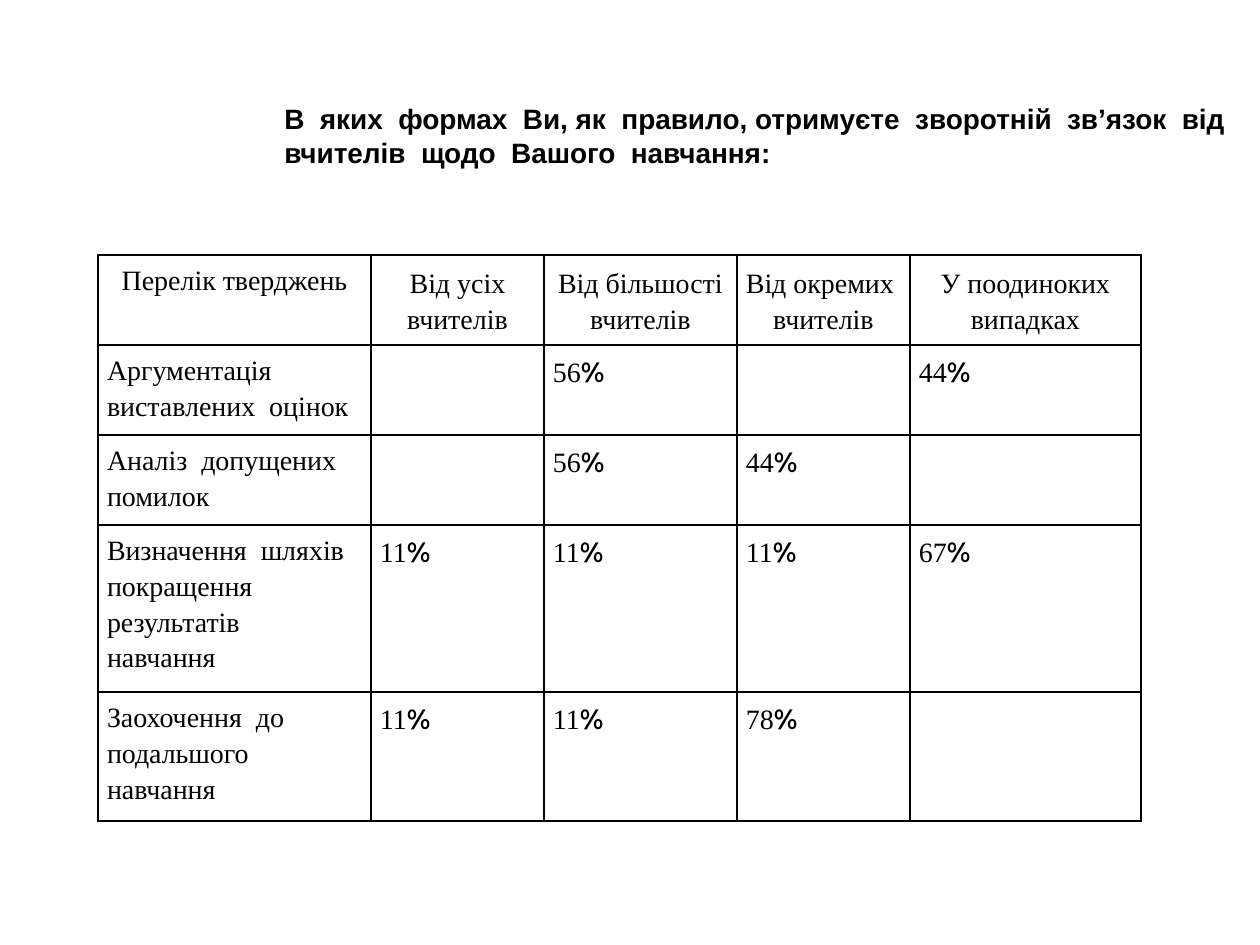
from lxml.etree import SubElement as Sub
from pptx import Presentation
from pptx.dml.color import RGBColor
from pptx.enum.text import MSO_ANCHOR as Anchor, PP_ALIGN as Align
from pptx.oxml.ns import qn
from pptx.util import Pt

PX = 914400 // 126  # slide scale: 126 px to the inch
INK = "000000"
SERIF = "Times New Roman"
TITLE = ("В  яких  формах  Ви, як  правило, отримуєте  зворотній  зв’язок  від  "
         "вчителів  щодо  Вашого  навчання:")
COLS = [273, 173, 193, 173, 231]
ROWS = [90, 90, 90, 167, 129]
HEAD = ["Перелік тверджень", "Від усіх вчителів", "Від більшості вчителів",
        "Від окремих  вчителів", "У поодиноких випадках"]
BODY = [
    ("Аргументація виставлених  оцінок", None, 56, None, 44),
    ("Аналіз  допущених  помилок", None, 56, 44, None),
    ("Визначення  шляхів  покращення  результатів  навчання", 11, 11, 11, 67),
    ("Заохочення  до  подальшого  навчання", 11, 11, 78, None),
]


def px(n):
    return n * PX


def paint(font, code):
    font.color.rgb = RGBColor.from_string(code)


def add_run(para, text, face=SERIF, bold=False):
    run = para.add_run()
    run.text = text
    font = run.font
    font.name, font.size, font.bold = face, Pt(16), bold
    paint(font, INK)


def frame(cell):
    """Draw the four borders of a cell."""
    props = cell._tc.get_or_add_tcPr()
    for i, side in enumerate(("lnL", "lnR", "lnT", "lnB")):
        line = Sub(props, qn("a:" + side), w=str(Pt(0.96)))
        fill = Sub(line, qn("a:solidFill"))
        Sub(fill, qn("a:srgbClr"), val=INK)
        props.insert(i, line)


def add_title(slide, x, y, w, h):
    box = slide.shapes.add_textbox(px(x), px(y), px(w), px(h))
    text = box.text_frame
    text.word_wrap = True
    text.vertical_anchor = Anchor.MIDDLE
    para = text.paragraphs[0]
    para._p.get_or_add_pPr().set("marL", str(px(252)))
    add_run(para, TITLE, "Arial", True)


def fill_cell(cell, value, head, first):
    cell.fill.background()
    frame(cell)
    cell.margin_left = cell.margin_right = px(9)
    cell.margin_top = cell.margin_bottom = px(6)
    if value is None:
        return
    para = cell.text_frame.paragraphs[0]
    para.line_spacing = 1.15
    if head:
        para.alignment = Align.CENTER
        if not first:
            cell.vertical_anchor = Anchor.MIDDLE
    add_run(para, str(value))
    if not head and not first:
        add_run(para, "%", "Cabin", True)


def add_grid(slide, x, y):
    data = [HEAD, *BODY]
    table = slide.shapes.add_table(len(ROWS), len(COLS), px(x), px(y),
                                   px(sum(COLS)), px(sum(ROWS))).table
    table.first_row = table.horz_banding = False
    for col, w in zip(table.columns, COLS):
        col.width = px(w)
    for r, (row, h) in enumerate(zip(table.rows, ROWS)):
        row.height = px(h)
        for c, value in enumerate(data[r]):
            fill_cell(table.cell(r, c), value, r == 0, c == 0)


def main():
    deck = Presentation()
    deck.slide_width, deck.slide_height = px(1260), px(945)
    slide = deck.slides.add_slide(deck.slide_layouts[6])
    # Survey answers
    add_grid(slide, 98, 255)
    # Question
    add_title(slide, 20, 96, 1240, 79)
    deck.save("out.pptx")


if __name__ == "__main__":
    main()
